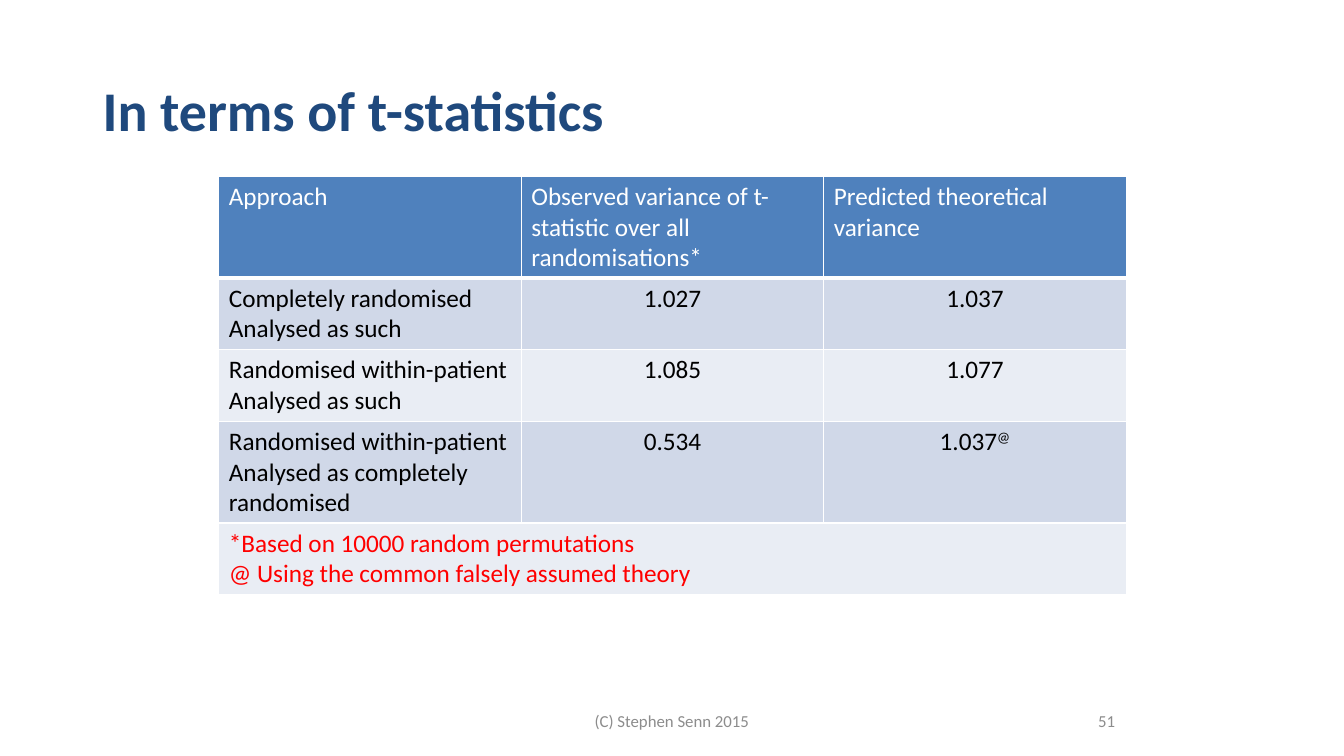
import pptx
import pptx.util
import pptx.dml.color
import pptx.enum.text
import pptx.oxml
import pptx.oxml.ns

Inches = pptx.util.Inches
ALIGN = pptx.enum.text.PP_ALIGN
ANCHOR = pptx.enum.text.MSO_ANCHOR


def rgb(value):
    return pptx.dml.color.RGBColor.from_string(value)


class SlideBuilder:
    font = "Calibri"
    border = "FFFFFF"

    def __init__(self, prs):
        self.s = prs.slides.add_slide(prs.slide_layouts[6])

    def run(self, p, text, size, color, bold=False, baseline=None):
        r = p.add_run()
        r.text = text
        style = {"name": self.font, "size": pptx.util.Pt(size), "bold": bold}
        for name, value in style.items():
            setattr(r.font, name, value)
        r.font.color.rgb = rgb(color)
        if baseline:
            r._r.get_or_add_rPr().set("baseline", str(baseline * 1000))

    def text(self, box, text, size, color, align=ALIGN.LEFT, bold=False, spacing=1.0):
        sp = self.s.shapes.add_textbox(*map(Inches, box))
        tf = sp.text_frame
        for name, value in {"word_wrap": True, "vertical_anchor": ANCHOR.MIDDLE}.items():
            setattr(tf, name, value)
        p = tf.paragraphs[0]
        for name, value in {"alignment": align, "line_spacing": spacing}.items():
            setattr(p, name, value)
        self.run(p, text, size, color, bold)

    def borders(self, cell, bottom):
        tcPr = cell._tc.get_or_add_tcPr()
        for side, width in {"L": 1, "R": 1, "T": 1, "B": bottom}.items():
            tcPr.append(pptx.oxml.parse_xml(
                f'<a:ln{side} {pptx.oxml.ns.nsdecls("a")} w="{pptx.util.Pt(width)}">'
                f'<a:solidFill><a:srgbClr val="{self.border}"/></a:solidFill></a:ln{side}>'))

    def cell(self, cell, paragraphs, fill, color, align, bottom=1):
        self.borders(cell, bottom)
        cell.fill.solid()
        cell.fill.fore_color.rgb = rgb(fill)
        tf = cell.text_frame
        for i, text in enumerate(paragraphs):
            p = tf.add_paragraph() if i else tf.paragraphs[0]
            p.alignment = align
            body, mark, _ = text.partition("^")
            self.run(p, body, 18, color)
            if mark:
                self.run(p, text[len(body) + 1:], 18, color, baseline=30)

    def table(self, box, rows, heights, note):
        columns = len(rows[0])
        table = self.s.shapes.add_table(len(rows) + 1, columns, *map(Inches, box)).table
        for row, height in zip(table.rows, heights):
            row.height = Inches(height)
        for i, row in enumerate(rows):
            fill = "D0D8E8" if i % 2 else "E9EDF4"
            for j, paragraphs in enumerate(row):
                if i == 0:
                    style = ("4F81BD", "FFFFFF", ALIGN.LEFT, 3)
                else:
                    style = (fill, "000000", ALIGN.CENTER if j else ALIGN.LEFT)
                self.cell(table.cell(i, j), paragraphs, *style)
        last = len(rows)
        table.cell(last, 0).merge(table.cell(last, columns - 1))
        self.cell(table.cell(last, 0), note, "E9EDF4", "FF0000", ALIGN.LEFT)


def main():
    prs = pptx.Presentation()
    prs.slide_width, prs.slide_height = Inches(13.33), Inches(7.5)
    slide = SlideBuilder(prs)
    slide.text((0.92, 0.4, 11.5, 1.45), "In terms of t-statistics", 40, "1F497D",
               bold=True, spacing=0.9)
    rows = [
        [["Approach"],
         ["Observed variance of t-statistic over all randomisations*"],
         ["Predicted theoretical variance"]],
        [["Completely randomised Analysed as such"], ["1.027"], ["1.037"]],
        [["Randomised within-patient", "Analysed as such"], ["1.085"], ["1.077"]],
        [["Randomised within-patient Analysed as completely randomised"],
         ["0.534"], ["1.037^@"]],
    ]
    note = ["*Based on 10000 random permutations",
            "@ Using the common falsely assumed theory"]
    slide.table((2.17, 1.75, 9, 4.15), rows, [1.01, 0.71, 0.71, 1.01, 0.71], note)
    slide.text((5.08, 6.95, 3.17, 0.4), "(C) Stephen Senn 2015", 12, "8C8C8C", ALIGN.CENTER)
    slide.text((8.83, 6.95, 2.33, 0.4), "51", 12, "8C8C8C", ALIGN.RIGHT)
    prs.save("out.pptx")


if __name__ == "__main__":
    main()
